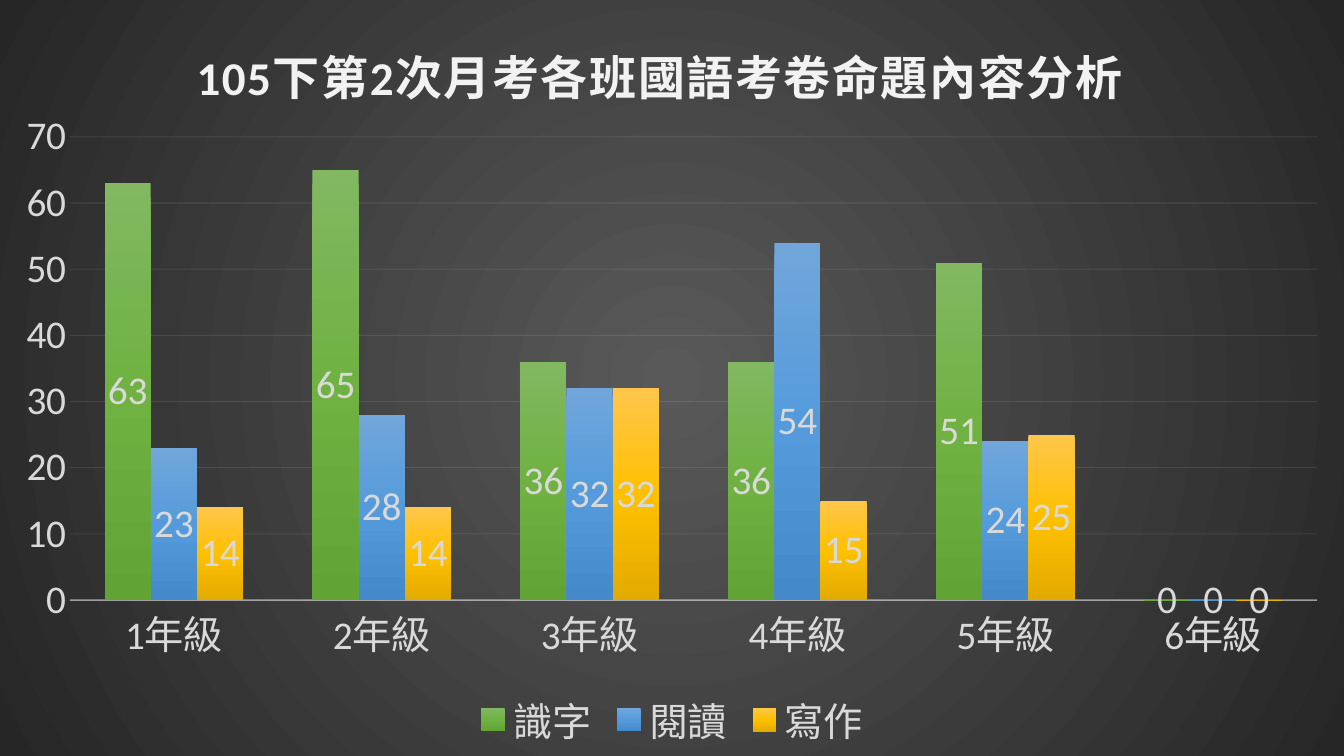
import pptx
import pptx.chart.data
import pptx.dml.color
import pptx.enum.chart
import pptx.oxml
import pptx.oxml.ns
import pptx.util
from pptx.util import Inches, Pt

# Content
TITLE = "105下第2次月考各班國語考卷命題內容分析"
GRADES = ["1年級", "2年級", "3年級", "4年級", "5年級", "6年級"]
SERIES = [
    ("識字", (63, 65, 36, 36, 51, 0), ("81B861", "6FB242", "62A336")),
    ("閱讀", (23, 28, 32, 54, 24, 0), ("71A6DB", "559BDB", "448ACA")),
    ("寫作", (14, 14, 32, 15, 25, 0), ("FFC64B", "FFC000", "E3AB00")),
]
BACKDROP = ("595959", "262626")
LIGHT, TEXT = "F2F2F2", "D9D9D9"
FONT, SIZE, TITLE_SIZE = "Calibri", 28, 33.6
WIDTH, HEIGHT = Inches(13.33), Inches(7.5)
TITLE_AT = {"x": 0.14, "y": 0.035}
PLOT_AT = {"x": 0.052, "y": 0.181, "w": 0.928, "h": 0.613}
NS = pptx.oxml.ns.nsdecls("a", "c")
qn = pptx.oxml.ns.qn


def rgb(value):
    return pptx.dml.color.RGBColor.from_string(value)


def set_font(font, size=SIZE, color=TEXT, bold=False):
    font.name, font.size, font.bold = FONT, Pt(size), bold
    font.color.rgb = rgb(color)


def gradient(colors, direction):
    step = 100000 // (len(colors) - 1)
    stops = "".join(f'<a:gs pos="{i * step}"><a:srgbClr val="{c}"/></a:gs>'
                    for i, c in enumerate(colors))
    return f"<a:gradFill {NS}><a:gsLst>{stops}</a:gsLst>{direction}</a:gradFill>"


def set_line(line, width, alpha):
    line.width = Pt(width)
    line.color.rgb = rgb(LIGHT)
    color = line._get_or_add_ln().find(".//" + qn("a:srgbClr"))
    color.append(pptx.oxml.parse_xml(f'<a:alpha {NS} val="{alpha * 1000}"/>'))


def layout(place, inner=False):
    target = '<c:layoutTarget val="inner"/>' if inner else ""
    modes = "".join(f'<c:{k}Mode val="edge"/>' for k in place if k in "xy")
    sizes = "".join(f'<c:{k} val="{v}"/>' for k, v in place.items())
    return pptx.oxml.parse_xml(f"<c:layout {NS}><c:manualLayout>{target}{modes}{sizes}"
                               "</c:manualLayout></c:layout>")


def set_layout(parent, new, index):
    for old in parent.findall(qn("c:layout")):
        parent.remove(old)
    parent.insert(index, new)


prs = pptx.Presentation()
prs.slide_width, prs.slide_height = WIDTH, HEIGHT
s = prs.slides.add_slide(prs.slide_layouts[6])

# Chart
data = pptx.chart.data.CategoryChartData()
data.categories = GRADES
for name, values, _ in SERIES:
    data.add_series(name, values)
chart = s.shapes.add_chart(pptx.enum.chart.XL_CHART_TYPE.COLUMN_CLUSTERED,
                           0, 0, WIDTH, HEIGHT, data).chart
set_font(chart.font)

# Title
tf = chart.chart_title.text_frame
tf.text = TITLE
r = tf.paragraphs[0].runs[0]
set_font(r.font, TITLE_SIZE, LIGHT, True)
r.font._element.set("spc", "100")
chart.chart_title.include_in_layout = False
set_layout(chart.chart_title._element, layout(TITLE_AT), 1)

# Backdrop
circle = ('<a:path path="circle"><a:fillToRect l="50000" t="50000" r="50000" b="50000"/>'
          "</a:path>")
chart._chartSpace.find(qn("c:chart")).addnext(pptx.oxml.parse_xml(
    f"<c:spPr {NS}>{gradient(BACKDROP, circle)}<a:ln><a:noFill/></a:ln></c:spPr>"))

# Columns and labels
plot = chart.plots[0]
plot.gap_width, plot.overlap, plot.vary_by_categories = 150, 0, False
for ser, (_, _, colors) in zip(plot.series, SERIES):
    ser.format.fill.solid()
    solid = ser._element.find(qn("c:spPr")).find(qn("a:solidFill"))
    down = '<a:lin ang="5400000" scaled="0"/>'
    solid.getparent().replace(solid, pptx.oxml.parse_xml(gradient(colors, down)))
    labels = ser.data_labels
    labels.show_value = True
    labels.position = pptx.enum.chart.XL_LABEL_POSITION.CENTER
    set_font(labels.font)
set_layout(chart._chartSpace.find(".//" + qn("c:plotArea")), layout(PLOT_AT, True), 0)

# Axes
for axis in (chart.category_axis, chart.value_axis):
    axis.major_tick_mark = axis.minor_tick_mark = pptx.enum.chart.XL_TICK_MARK.NONE
    set_font(axis.tick_labels.font)
set_line(chart.category_axis.format.line, 1, 54)
scale = chart.value_axis
scale.minimum_scale, scale.maximum_scale, scale.major_unit = 0, 70, 10
scale.format.line.fill.background()
set_line(scale.major_gridlines.format.line, 0.75, 10)

# Legend
chart.has_legend = True
chart.legend.position = pptx.enum.chart.XL_LEGEND_POSITION.BOTTOM
chart.legend.include_in_layout = False
set_font(chart.legend.font)

prs.save("out.pptx")
